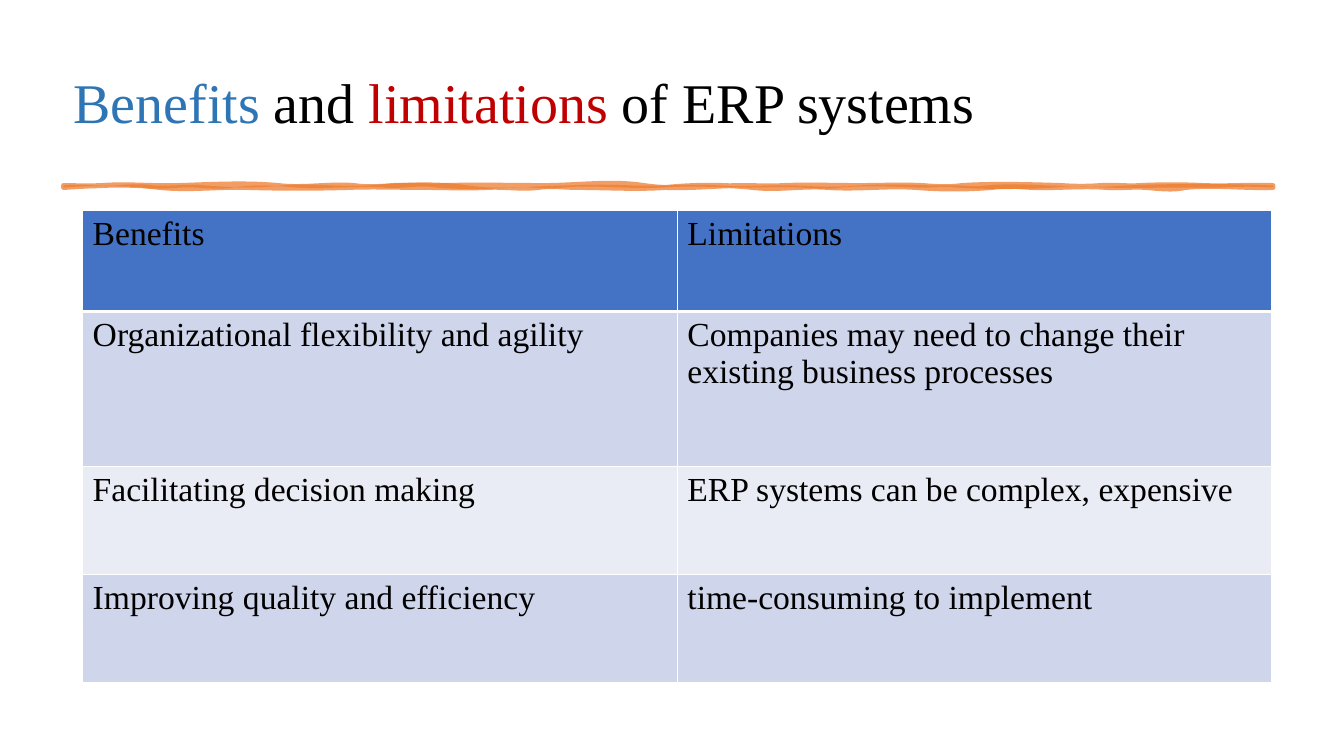
from dataclasses import dataclass

from lxml.etree import SubElement, _Element as Element
from pptx import Presentation
from pptx.dml.color import RGBColor
from pptx.enum.text import MSO_ANCHOR as Anchor, MSO_AUTO_SIZE as AutoSize, PP_ALIGN as Align
from pptx.oxml.ns import qn
from pptx.slide import Slide
from pptx.table import _Cell as Cell
from pptx.util import Inches, Pt

GRID = Inches(0.01)
SLIDE_COLUMNS, SLIDE_ROWS = 1333.33, 750
FONT = "Times New Roman"
WHITE = RGBColor(0xFF, 0xFF, 0xFF)
BLACK = RGBColor(0x00, 0x00, 0x00)
BLUE = RGBColor(0x2E, 0x75, 0xB6)
RED = RGBColor(0xC0, 0x00, 0x00)
ORANGE = RGBColor(0xED, 0x7D, 0x31)
HEADER_FILL = RGBColor(0x44, 0x72, 0xC4)
ODD_FILL = RGBColor(0xCF, 0xD5, 0xEA)
EVEN_FILL = RGBColor(0xE9, 0xEB, 0xF5)
STROKE_LEFT, STROKE_RIGHT = 63, 1263
STROKE_TOP, STROKE_BOTTOM = 184, 186


@dataclass(frozen=True)
class TitlePart:
    wording: str
    color: RGBColor


@dataclass(frozen=True)
class ComparisonRow:
    benefit: str
    limitation: str
    height: int
    fill: RGBColor


@dataclass(frozen=True)
class Wave:
    end: int
    first_pull: int
    second_pull: int


@dataclass(frozen=True)
class BrushStroke:
    top: list[Wave]
    bottom: list[Wave]
    hidden_part: dict[str, str]


TITLE_PARTS = [
    TitlePart("Benefits", BLUE),
    TitlePart(" and ", BLACK),
    TitlePart("limitations", RED),
    TitlePart(" of ERP systems", BLACK),
]

COMPARISON = [
    ComparisonRow("Benefits", "Limitations", 100, HEADER_FILL),
    ComparisonRow("Organizational flexibility and agility",
                  "Companies may need to change their existing business processes", 154, ODD_FILL),
    ComparisonRow("Facilitating decision making", "ERP systems can be complex, expensive", 107, EVEN_FILL),
    ComparisonRow("Improving quality and efficiency", "time-consuming to implement", 107, ODD_FILL),
]

BRUSH_STROKES = [
    BrushStroke(
        top=[Wave(102, 0, 1), Wave(177, -2, 1), Wave(276, -1, -3), Wave(351, 3, -2), Wave(390, 2, 1),
             Wave(441, -1, 1), Wave(540, -1, 0), Wave(639, 0, -5), Wave(738, 5, 0), Wave(777, 0, 1),
             Wave(852, -1, 0), Wave(915, 0, -1), Wave(954, 1, 2), Wave(1053, -2, -1), Wave(1092, 1, 1),
             Wave(1131, -1, 1), Wave(1194, -1, -1), Wave(STROKE_RIGHT, 1, -1)],
        bottom=[Wave(1176, 1, -3), Wave(1137, 3, 1), Wave(1098, -1, 1), Wave(1023, -2, 1), Wave(984, -1, -2),
                Wave(909, 2, 2), Wave(822, -2, 2), Wave(747, -2, 3), Wave(660, -3, -3), Wave(573, 2, 0),
                Wave(534, 0, -2), Wave(483, 2, -1), Wave(420, 1, 0), Wave(345, 0, -1), Wave(246, 1, 1),
                Wave(159, -1, 3), Wave(STROKE_LEFT, -4, -2)],
        hidden_part={"fill": "none"}),
    BrushStroke(
        top=[Wave(114, -2, 1), Wave(153, -1, -2), Wave(204, 1, -2), Wave(279, 2, 3), Wave(366, -3, 2),
             Wave(465, -3, -5), Wave(564, 5, 0), Wave(627, -1, -1), Wave(714, 1, -2), Wave(789, 2, -1),
             Wave(852, 1, 2), Wave(939, -2, 0), Wave(978, -1, 2), Wave(1041, -2, -1), Wave(1116, 1, 2),
             Wave(STROKE_RIGHT, -2, -2)],
        bottom=[Wave(1212, -1, -1), Wave(1173, 0, 0), Wave(1098, 0, 1), Wave(1047, -1, -2), Wave(948, 2, 2),
                Wave(909, -2, 1), Wave(834, -1, -2), Wave(795, 2, 1), Wave(744, -1, 0), Wave(657, 0, -2),
                Wave(558, 2, -3), Wave(507, 3, -2), Wave(432, 2, 2), Wave(381, -3, 2), Wave(294, -2, 2),
                Wave(231, -2, -3), Wave(180, 3, -1), Wave(141, 1, 2), Wave(STROKE_LEFT, -2, -2)],
        hidden_part={"stroke": "0"}),
]


def cells(count: float) -> int:
    return round(count * GRID)


def add_step(outline: Element, kind: str, *points: tuple[float, float]) -> None:
    step = SubElement(outline, qn(kind))
    for x, y in points:
        SubElement(step, qn("a:pt"), x=str(cells(x - STROKE_LEFT)), y=str(cells(y - STROKE_TOP)))


def add_edge(outline: Element, start: int, level: int, waves: list[Wave]) -> None:
    for wave in waves:
        third = (wave.end - start) / 3
        add_step(outline, "a:cubicBezTo", (start + third, level + wave.first_pull),
                 (wave.end - third, level + wave.second_pull), (wave.end, level))
        start = wave.end


def draw_divider(slide: Slide, brushes: list[BrushStroke]) -> None:
    left, right, top, bottom = map(cells, (STROKE_LEFT, STROKE_RIGHT, STROKE_TOP, STROKE_BOTTOM))
    builder = slide.shapes.build_freeform(left, top)
    builder.add_line_segments([(right, top), (right, bottom), (left, bottom)])
    divider = builder.convert_to_shape()
    divider.shadow.inherit = False
    divider.fill.solid()
    divider.fill.fore_color.rgb = ORANGE
    divider.line.color.rgb = ORANGE
    divider.line.width = Pt(3.5)
    properties = divider.element.spPr
    for color in properties.iter(qn("a:srgbClr")):
        SubElement(color, qn("a:alpha"), val="75000")
    outlines = next(properties.iter(qn("a:pathLst")))
    outlines.remove(outlines[0])
    for brush in brushes:
        outline = SubElement(outlines, qn("a:path"), w=str(right - left), h=str(bottom - top),
                             **brush.hidden_part)
        add_step(outline, "a:moveTo", (STROKE_LEFT, STROKE_TOP))
        add_edge(outline, STROKE_LEFT, STROKE_TOP, brush.top)
        add_step(outline, "a:lnTo", (STROKE_RIGHT, STROKE_BOTTOM))
        add_edge(outline, STROKE_RIGHT, STROKE_BOTTOM, brush.bottom)
        SubElement(outline, qn("a:close"))


def write_title(slide: Slide, parts: list[TitlePart]) -> None:
    title = slide.shapes.title
    title.left, title.top, title.width, title.height = map(cells, (63, 26, 1205, 157))
    frame = title.text_frame
    frame.word_wrap = True
    frame.auto_size = AutoSize.NONE
    frame.vertical_anchor = Anchor.MIDDLE
    heading = frame.paragraphs[0]
    heading.alignment = Align.LEFT
    heading.line_spacing = 0.9
    for part in parts:
        run = heading.add_run()
        run.text = part.wording
        run.font.name = FONT
        run.font.size = Pt(40)
        run.font.color.rgb = part.color


def add_borders(cell: Cell, widths: dict[str, float]) -> None:
    properties = cell._tc.get_or_add_tcPr()
    for side, width in widths.items():
        border = SubElement(properties, qn(side), w=str(Pt(width)))
        SubElement(SubElement(border, qn("a:solidFill")), qn("a:srgbClr"), val=str(WHITE))


def draw_comparison(slide: Slide, rows: list[ComparisonRow]) -> None:
    height = sum(row.height for row in rows)
    comparison = slide.shapes.add_table(len(rows), 2, *map(cells, (82, 209, 1180, height))).table
    for index, row in enumerate(rows):
        comparison.rows[index].height = cells(row.height)
        for column, wording in enumerate((row.benefit, row.limitation)):
            cell = comparison.cell(index, column)
            if index == 0:
                add_borders(cell, {"a:lnL": 1, "a:lnR": 1, "a:lnT": 1, "a:lnB": 3})
            cell.fill.solid()
            cell.fill.fore_color.rgb = row.fill
            cell.text_frame.text = wording
            font = cell.text_frame.paragraphs[0].runs[0].font
            font.name = FONT
            font.size = Pt(24)
            font.bold = False
            font.color.rgb = BLACK


def main() -> None:
    presentation = Presentation()
    presentation.slide_width = cells(SLIDE_COLUMNS)
    presentation.slide_height = cells(SLIDE_ROWS)
    slide = presentation.slides.add_slide(presentation.slide_layouts.get_by_name("Title Only"))
    write_title(slide, TITLE_PARTS)
    draw_divider(slide, BRUSH_STROKES)
    draw_comparison(slide, COMPARISON)
    presentation.save("out.pptx")


if __name__ == "__main__":
    main()
